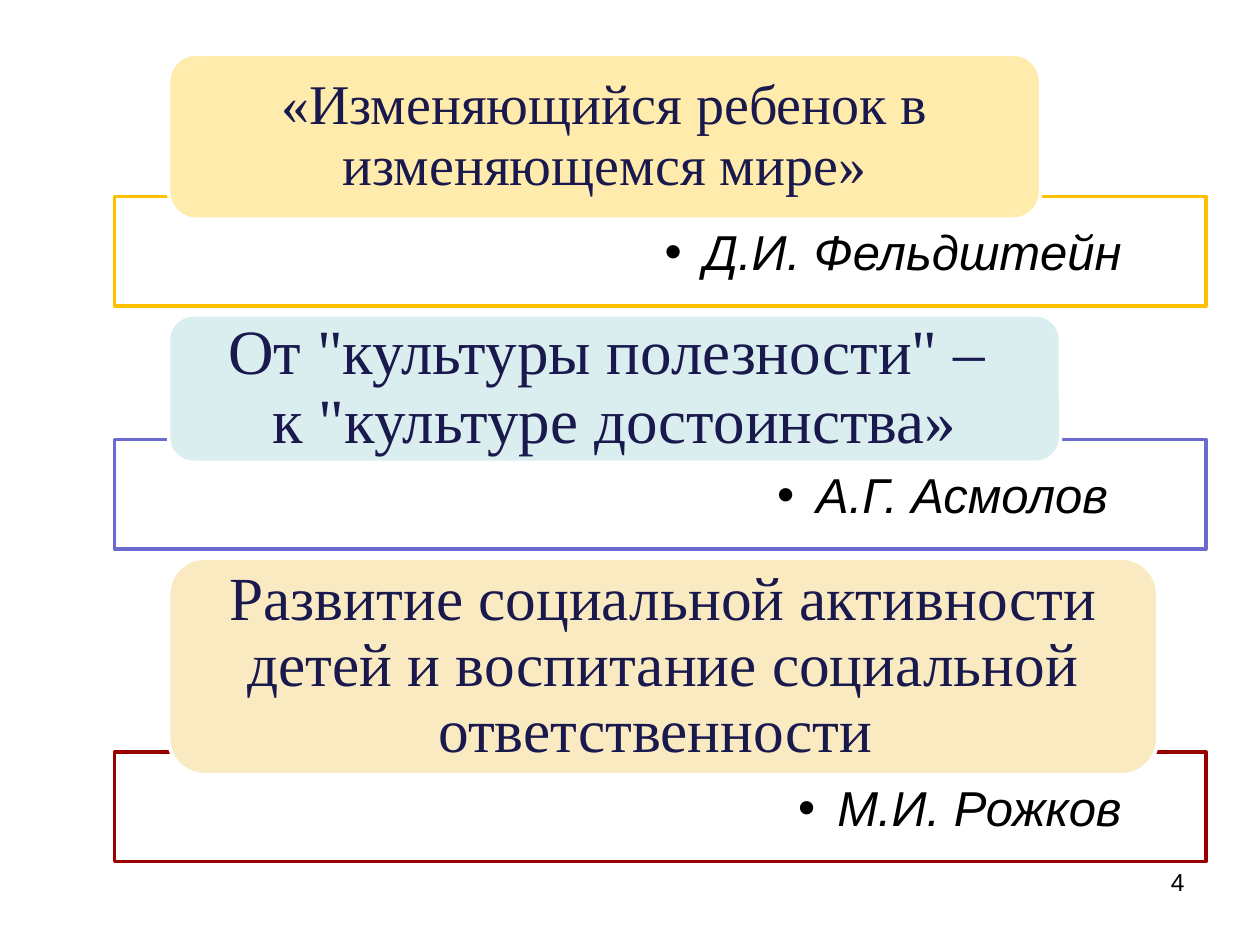
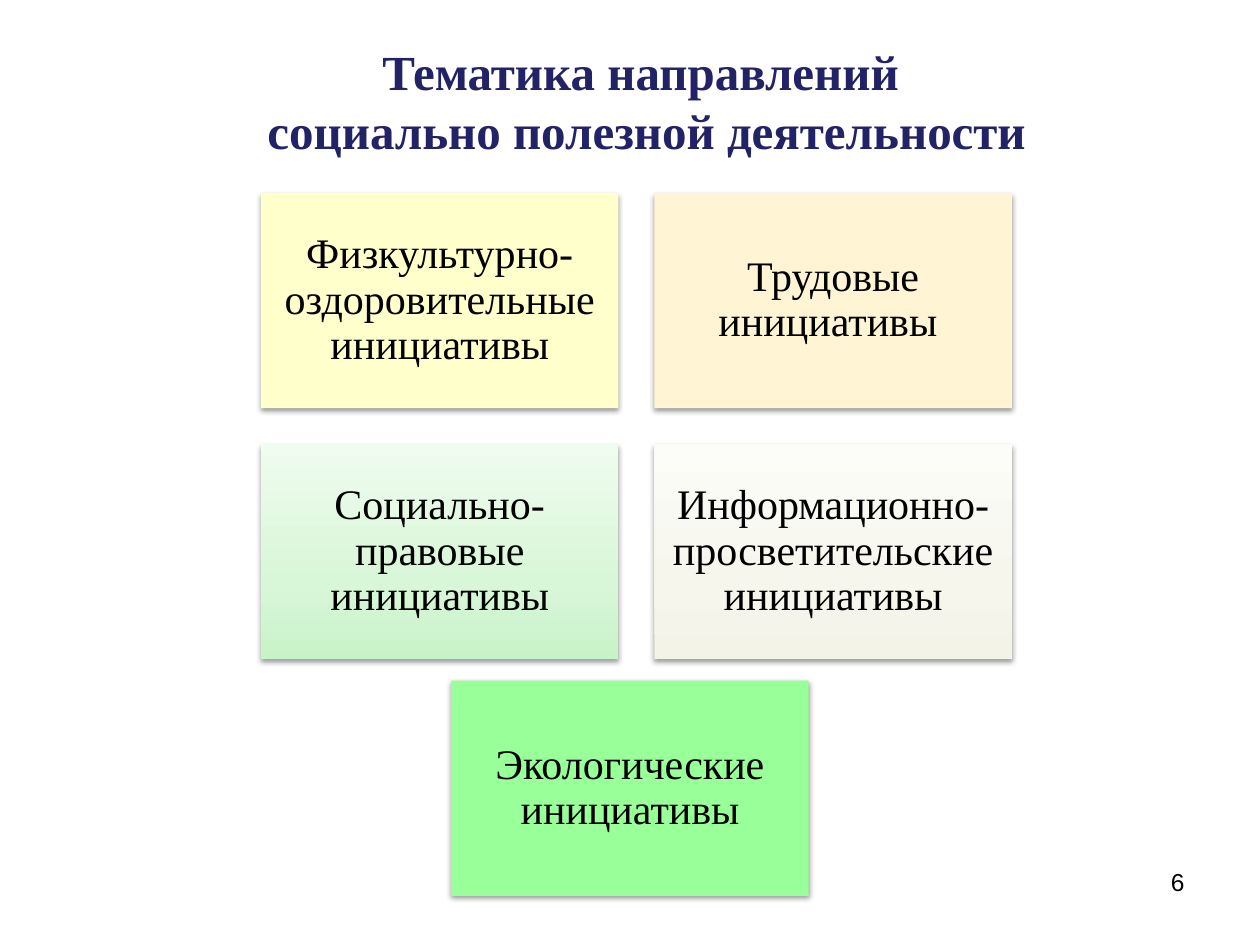
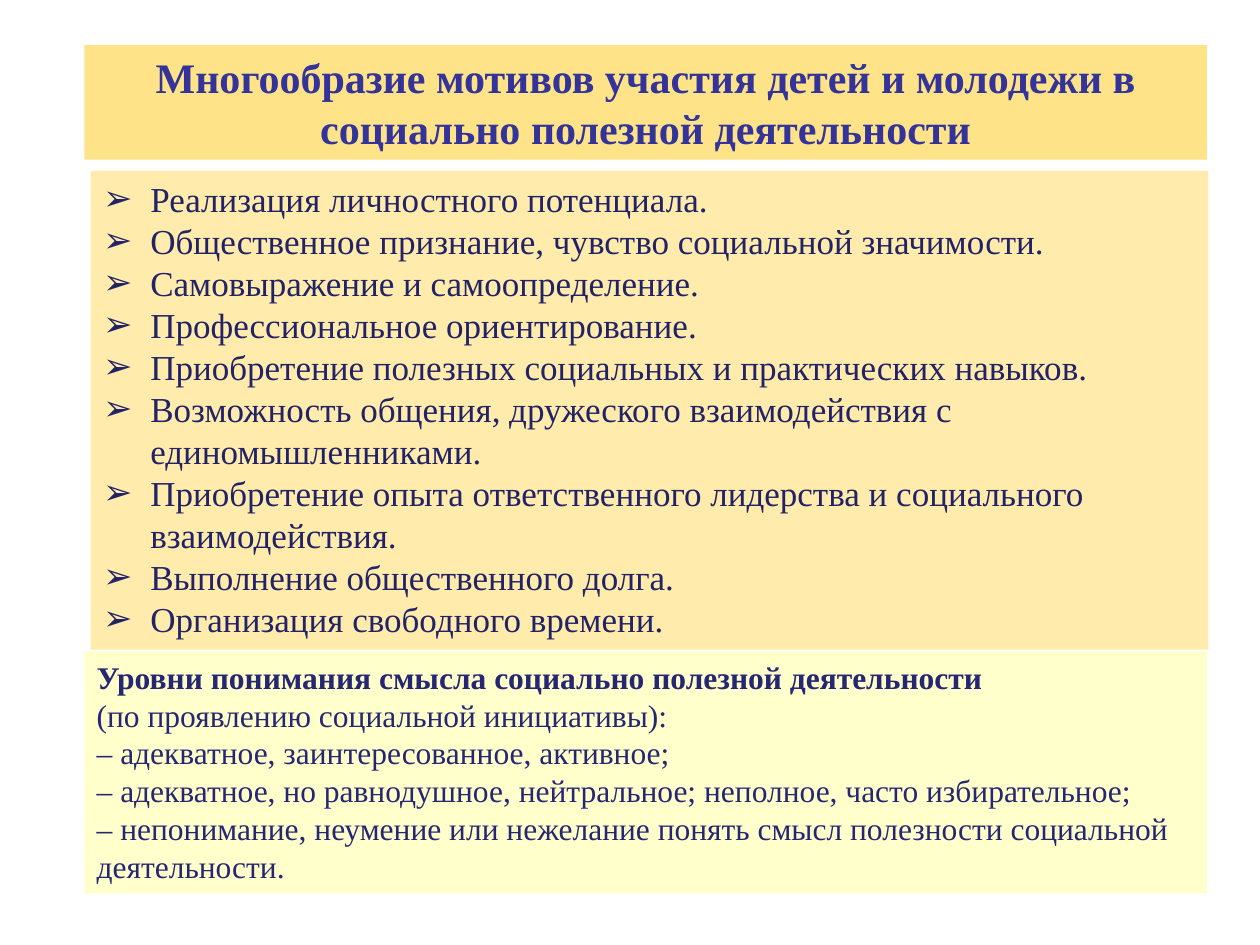
from copy import deepcopy
from dataclasses import dataclass

from lxml.etree import SubElement
from pptx import Presentation
from pptx.dml.color import RGBColor
from pptx.enum.shapes import MSO_SHAPE as Preset
from pptx.enum.text import MSO_ANCHOR as Anchor, MSO_AUTO_SIZE as AutoSize, PP_ALIGN as Align
from pptx.oxml.ns import qn
from pptx.util import Cm, Pt

SLIDE_W, SLIDE_H = 25.4, 19.05
TITLE_ONLY, BLANK = 5, 6


@dataclass(frozen=True)
class Theme:
    serif: str = "Times New Roman"
    sans: str = "Arial"
    # Text colours
    black: str = "000000"
    navy: str = "222267"
    dark_navy: str = "19194D"
    level_navy: str = "262673"
    heading_blue: str = "333399"
    # Fills
    white: str = "FFFFFF"
    cream: str = "FFEBAB"
    gold: str = "FFE389"
    lemon: str = "FFFFCC"
    # Type sizes
    title: int = 28
    band_title: int = 24
    tile: int = 24
    author: int = 28
    motive: int = 20
    level: int = 18
    page: int = 14


THEME = Theme()

# Idea, type size, cap width, cap height, cap fill, frame line, author
IDEAS = [
    ("«Изменяющийся ребенок в изменяющемся мире»", 32, 17.58, 3.33,
     THEME.cream, "FFC000", "Д.И. Фельдштейн"),
    ('От "культуры полезности" – \vк "культуре достоинства»', 36, 17.98, 2.97,
     "DAEDEF", "6B6BCF", "А.Г. Асмолов "),
    ("Развитие социальной активности детей и воспитание социальной ответственности ",
     35, 19.94, 4.37, "FAEAC2", "990000", "М.И. Рожков"),
]

# A fill is one colour, or three stops running from bottom to top
INITIATIVES = [
    ("Физкультурно-оздоровительные инициативы", THEME.lemon),
    ("Трудовые инициативы ", "FFF5D5"),
    ("Социально-правовые инициативы", ("C8F3C8", "D8F6D8", "EFFCEF")),
    ("Информационно-просветительские инициативы", ("F3F3E7", "F6F6ED", "FCFCF8")),
]

MOTIVES = [
    "Реализация личностного потенциала.",
    "Общественное признание, чувство социальной значимости.",
    "Самовыражение и самоопределение.",
    "Профессиональное ориентирование.",
    "Приобретение полезных социальных и практических навыков.",
    "Возможность общения, дружеского взаимодействия с единомышленниками.",
    "Приобретение опыта ответственного лидерства и социального взаимодействия.",
    "Выполнение общественного долга.",
    "Организация свободного времени.",
]

LEVELS = [
    "Уровни понимания смысла социально полезной деятельности",
    "(по проявлению социальной инициативы):",
    "– адекватное, заинтересованное, активное;",
    "– адекватное, но равнодушное, нейтральное; неполное, часто избирательное;",
    "– непонимание, неумение или нежелание понять смысл полезности социальной деятельности.",
]


def rgb(code):
    return RGBColor.from_string(code)


def set_bullet(paragraph, char, indent):
    props = paragraph._p.get_or_add_pPr()
    props.set("marL", str(Cm(indent)))
    props.set("indent", str(-Cm(indent)))
    SubElement(props, qn("a:buFont"), typeface=THEME.sans)
    SubElement(props, qn("a:buChar"), char=char)


def write_text(holder, lines, size, color, font=THEME.serif, bold=False, italic=False,
               align=Align.LEFT, anchor=Anchor.TOP, insets=(0.25, 0.13, 0.25, 0.13),
               spacing=None, bullet=None, indent=0):
    """Fill a shape with one paragraph per line; insets run left, top, right, bottom."""
    frame = holder.text_frame
    frame.word_wrap = True
    frame.auto_size = AutoSize.NONE
    frame.vertical_anchor = anchor
    frame.margin_left, frame.margin_top, frame.margin_right, frame.margin_bottom = map(Cm, insets)
    for index, line in enumerate(lines):
        paragraph = frame.add_paragraph() if index else frame.paragraphs[0]
        paragraph.text = line
        paragraph.alignment = align
        if spacing:
            paragraph.line_spacing = spacing
        if bullet:
            set_bullet(paragraph, bullet, indent)
        for run in paragraph.runs:
            run.font.name, run.font.size = font, Pt(size)
            run.font.bold, run.font.italic = bold, italic
            run.font.color.rgb = rgb(color)


def set_fill(shape, color):
    shape.fill.solid()
    shape.fill.fore_color.rgb = rgb(color)


def set_gradient(shape, colors):
    shape.fill.gradient()
    shape.fill.gradient_angle = 90
    stop_list = shape.element.spPr.find(qn("a:gradFill")).find(qn("a:gsLst"))
    stop_list.append(deepcopy(stop_list[0]))
    for stop, position, color in zip(shape.fill.gradient_stops, (0, 0.35, 1), colors):
        stop.position = position
        stop.color.rgb = rgb(color)


def add_panel(slide, left, top, width, height, fill, line=None, preset=Preset.RECTANGLE):
    panel = slide.shapes.add_shape(preset, Cm(left), Cm(top), Cm(width), Cm(height))
    panel.shadow.inherit = False
    if isinstance(fill, tuple):
        set_gradient(panel, fill)
    else:
        set_fill(panel, fill)
    if line:
        panel.line.color.rgb = rgb(line)
        panel.line.width = Pt(2)
    else:
        panel.line.fill.background()
    return panel


def add_soft_shadow(shape):
    effects = shape.element.spPr.find(qn("a:effectLst"))
    shadow = SubElement(effects, qn("a:outerShdw"), blurRad=str(Pt(3.1)), dist=str(Pt(1.6)),
                        dir="5400000", rotWithShape="0")
    tint = SubElement(shadow, qn("a:srgbClr"), val=THEME.black)
    SubElement(tint, qn("a:alpha"), val="38000")


def add_title(slide, lines, left, top, width, height, **text_format):
    title = slide.shapes.title
    title.left, title.top, title.width, title.height = map(Cm, (left, top, width, height))
    write_text(title, lines, bold=True, align=Align.CENTER, **text_format)
    return title


def add_page_number(slide, number):
    page = slide.shapes.add_textbox(Cm(18.21), Cm(17.35), Cm(5.92), Cm(1.32))
    write_text(page, [number], THEME.page, THEME.black, font=THEME.sans, align=Align.RIGHT)


def add_idea(slide, top, idea, size, width, height, fill, line, author):
    """Draw a framed author under an idea cap; return the bottom of the frame."""
    overlap, frame_height = 0.46, 2.21
    frame_top = top + height - overlap
    author_frame = add_panel(slide, 2.31, frame_top, 22, frame_height, THEME.white, line)
    write_text(author_frame, [author], THEME.author, THEME.black, font=THEME.sans, italic=True,
               align=Align.RIGHT, insets=(1.7, 0.64, 1.7, 0.56), spacing=0.9,
               bullet="•", indent=0.79)
    cap = add_panel(slide, 3.4, top, width, height, fill, THEME.white, Preset.ROUNDED_RECTANGLE)
    write_text(cap, [idea], size, THEME.dark_navy, align=Align.CENTER, anchor=Anchor.MIDDLE,
               insets=(0.58, 0, 0.58, 0), spacing=0.9)
    return frame_top + frame_height


def add_tile(slide, left, top, width, height, label, fill):
    tile = add_panel(slide, left, top, width, height, fill)
    add_soft_shadow(tile)
    write_text(tile, [label], THEME.tile, THEME.black, align=Align.CENTER, anchor=Anchor.MIDDLE,
               insets=(0.25,) * 4, spacing=0.9)


def build_ideas(slide):
    add_page_number(slide, "4")
    top, gap = 1.09, 0.18
    for idea in IDEAS:
        top = add_idea(slide, top, *idea) + gap


def build_initiatives(slide):
    add_page_number(slide, "6")
    add_title(slide, ["Тематика направлений ", "социально полезной деятельности"],
              1.4, 0.71, 23.27, 2.64, size=THEME.title, color=THEME.navy)
    # Two by two grid, then one centred tile below
    width, height, gap = 7.21, 4.34, 0.72
    for index, (label, fill) in enumerate(INITIATIVES):
        row, column = divmod(index, 2)
        add_tile(slide, 5.26 + column * (width + gap), 3.89 + row * (height + gap),
                 width, height, label, fill)
    add_tile(slide, (SLIDE_W - width) / 2, 13.72, width, height,
             "Экологические инициативы", "99FF99")


def build_motives(slide):
    left, width = 1.7, 22.63
    heading = add_title(
        slide, ["Многообразие мотивов участия детей и молодежи в социально полезной деятельности"],
        left, 0.91, width, 2.31, size=THEME.band_title, color=THEME.heading_blue)
    set_fill(heading, THEME.gold)

    motives = add_panel(slide, 1.83, 3.45, 22.53, 9.65, THEME.cream)
    write_text(motives, MOTIVES, THEME.motive, THEME.navy, bullet="➢", indent=0.95)

    levels = add_panel(slide, left, 13.13, width, 4.88, THEME.lemon)
    write_text(levels, LEVELS, THEME.level, THEME.level_navy)
    levels.text_frame.paragraphs[0].runs[0].font.bold = True


def main():
    deck = Presentation()
    deck.slide_width, deck.slide_height = Cm(SLIDE_W), Cm(SLIDE_H)
    for layout, build in ((BLANK, build_ideas), (TITLE_ONLY, build_initiatives),
                          (TITLE_ONLY, build_motives)):
        build(deck.slides.add_slide(deck.slide_layouts[layout]))
    deck.save("out.pptx")


if __name__ == "__main__":
    main()
